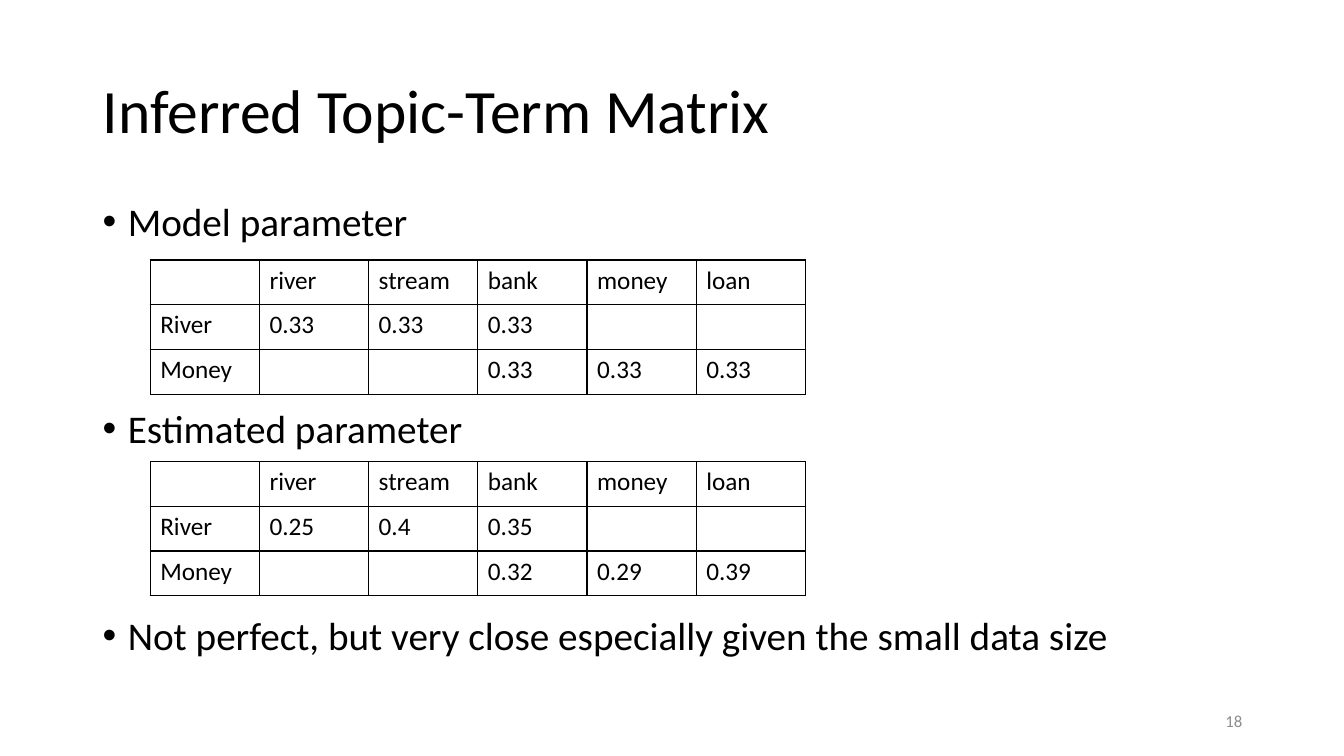
from lxml import etree
from pptx import Presentation
from pptx import util as u
from pptx.dml.color import RGBColor
from pptx.enum import text
from pptx.oxml import ns

FONT = "Calibri"
BLACK = "000000"
GREY = "8C8C8C"
TERMS = ["", "river", "stream", "bank", "money", "loan"]
MODEL = [
    TERMS,
    ["River", "0.33", "0.33", "0.33", "", ""],
    ["Money", "", "", "0.33", "0.33", "0.33"],
]
ESTIMATE = [
    TERMS,
    ["River", "0.25", "0.4", "0.35", "", ""],
    ["Money", "", "", "0.32", "0.29", "0.39"],
]
BULLETS = [
    "Model parameter",
    "Estimated parameter",
    "Not perfect, but very close especially given the small data size",
]


def color(value):
    return RGBColor.from_string(value)


def add_span(para, words, size, shade=BLACK):
    span = para.add_run()
    span.text = words
    span.font.name = FONT
    span.font.size = u.Pt(size)
    span.font.color.rgb = color(shade)


def add_box(page, left, top, width, height, anchor):
    box = page.shapes.add_textbox(*map(u.Inches, (left, top, width, height)))
    frame = box.text_frame
    frame.word_wrap = True
    frame.vertical_anchor = anchor
    return frame


def add_title(page, words):
    frame = add_box(page, 0.92, 0.4, 11.5, 1.45, text.MSO_ANCHOR.MIDDLE)
    para = frame.paragraphs[0]
    para.line_spacing = 0.9
    add_span(para, words, 44)


def add_bullets(page, items):
    frame = add_box(page, 0.92, 2, 11.5, 4.76, text.MSO_ANCHOR.TOP)
    for index, words in enumerate(items):
        para = frame.add_paragraph() if index else frame.paragraphs[0]
        para.line_spacing = 0.8
        para.space_before = u.Pt(121 if index else 10)
        props = para._p.get_or_add_pPr()
        props.set("marL", str(u.Inches(0.25)))
        props.set("indent", str(-u.Inches(0.25)))
        etree.SubElement(props, ns.qn("a:buFont"), typeface="Arial")
        etree.SubElement(props, ns.qn("a:buChar"), char="•")
        add_span(para, words, 28)


def add_borders(cell):
    props = cell._tc.get_or_add_tcPr()
    for side in ("lnL", "lnR", "lnT", "lnB"):
        line = etree.SubElement(props, ns.qn(f"a:{side}"), w=str(u.Pt(1)))
        fill = etree.SubElement(line, ns.qn("a:solidFill"))
        etree.SubElement(fill, ns.qn("a:srgbClr"), val=BLACK)


def add_matrix(page, top, rows):
    size = len(rows), len(rows[0])
    place = map(u.Inches, (1.49, top, 6.5, 1.33))
    table = page.shapes.add_table(*size, *place).table
    table.first_row = False
    table.horz_banding = False
    for row, values in enumerate(rows):
        for column, words in enumerate(values):
            cell = table.cell(row, column)
            add_borders(cell)
            cell.fill.background()
            if words:
                add_span(cell.text_frame.paragraphs[0], words, 18)


def add_page_number(page, number):
    frame = add_box(page, 9.42, 6.95, 3, 0.4, text.MSO_ANCHOR.MIDDLE)
    para = frame.paragraphs[0]
    para.alignment = text.PP_ALIGN.RIGHT
    add_span(para, number, 12, GREY)


def main():
    deck = Presentation()
    deck.slide_width = u.Inches(13.33)
    deck.slide_height = u.Inches(7.5)
    page = deck.slides.add_slide(deck.slide_layouts[6])
    add_title(page, "Inferred Topic-Term Matrix")
    add_bullets(page, BULLETS)
    add_matrix(page, 2.58, MODEL)
    add_matrix(page, 4.58, ESTIMATE)
    add_page_number(page, "18")
    deck.save("out.pptx")


if __name__ == "__main__":
    main()
